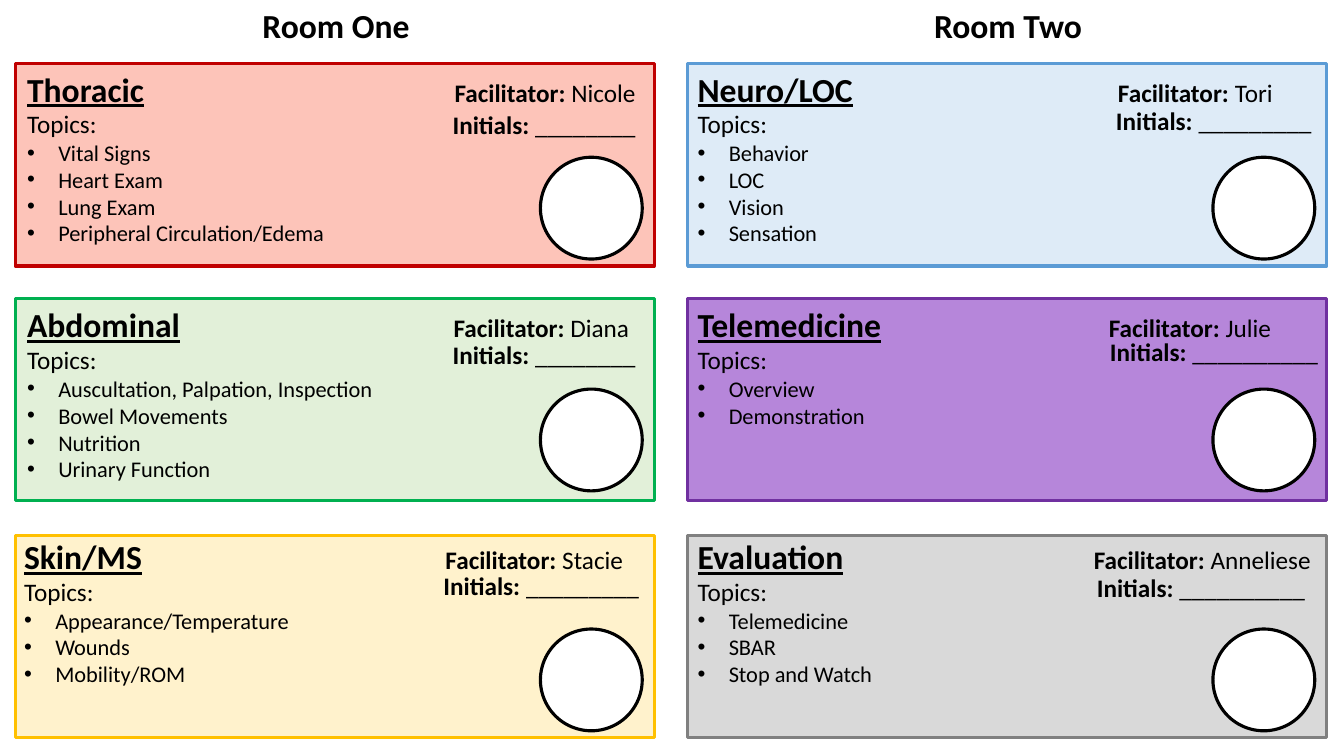
from lxml import etree
from pptx import Presentation, util as u
from pptx.dml.color import RGBColor
from pptx.enum import shapes, text
from pptx.oxml import ns

deck = Presentation()
deck.slide_width, deck.slide_height = u.Inches(13.33), u.Inches(7.5)
slide = deck.slides.add_slide(deck.slide_layouts[6])

# Grid: two rooms across, three stations down
ROOM_LEFT = (0.15, 6.82)
STATION_TOP = (0.63, 2.96, 5.31)
TOPICS_TOP = (0.63, 2.97, 5.27)
STAMP_TOP = (1.56, 3.86, 6.24)
STATION_W, STATION_H = 6.34, 2.01
STAMP_OFFSET, STAMP_SIZE = 5.21, 1.01
BULLET_INDENT = 0.31

# Room, row, name, fill, line, text left, facilitator, its tab stop,
# initials (left, top, width), blanks to sign on, topics
STATIONS = [
    (0, 0, "Thoracic", "FDC4B9", "C00000", 0.17, "Nicole", 4.24, (4.39, 1.04, 2.08), 8,
     ["Vital Signs", "Heart Exam", "Lung Exam", "Peripheral Circulation/Edema"]),
    (0, 1, "Abdominal", "E2F0D9", "00B050", 0.17, "Diana", 4.23, (4.39, 3.32, 2.08), 8,
     ["Auscultation, Palpation, Inspection", "Bowel Movements", "Nutrition", "Urinary Function"]),
    (0, 2, "Skin/MS", "FFF2CC", "FFC000", 0.14, "Stacie", 4.18, (4.3, 5.61, 2.21), 9,
     ["Appearance/Temperature", "Wounds", "Mobility/ROM"]),
    (1, 0, "Neuro/LOC", "DEEBF7", "5B9BD5", 6.82, "Tori", 4.17, (10.97, 1, 2.19), 9,
     ["Behavior", "LOC", "Vision", "Sensation"]),
    (1, 1, "Telemedicine", "B686DA", "7030A0", 6.82, "Julie", 4.08, (10.91, 3.29, 2.38), 10,
     ["Overview", "Demonstration"]),
    (1, 2, "Evaluation", "D9D9D9", "808080", 6.82, "Anneliese", 3.93, (10.78, 5.63, 2.38), 10,
     ["Telemedicine", "SBAR", "Stop and Watch"]),
]


def add_panel(kind, left, top, width, height, fill, line):
    panel = slide.shapes.add_shape(kind, *map(u.Inches, (left, top, width, height)))
    panel.shadow.inherit = False
    panel.fill.solid()
    panel.fill.fore_color.rgb = RGBColor.from_string(fill)
    panel.line.color.rgb = RGBColor.from_string(line)
    panel.line.width = u.Pt(2.25)


def add_text(left, top, width, height, lines):
    """Each line is a list of runs: (words, size, bold, underline)."""
    box = slide.shapes.add_textbox(*map(u.Inches, (left, top, width, height)))
    frame = box.text_frame
    frame.word_wrap = True
    frame.auto_size = text.MSO_AUTO_SIZE.SHAPE_TO_FIT_TEXT
    for number, line in enumerate(lines):
        paragraph = frame.add_paragraph() if number else frame.paragraphs[0]
        for words, size, bold, underline in line:
            run = paragraph.add_run()
            run.text = words
            run.font.name, run.font.size = "Calibri", u.Pt(size)
            run.font.bold, run.font.underline = bold, underline
            run.font.color.rgb = RGBColor.from_string("000000")
    return frame.paragraphs


# Room headings, one per half of the slide
for room, heading in enumerate(("Room One", "Room Two")):
    heading_lines = add_text(room * 13.33 / 2, 0, 13.33 / 2, 0.5,
                             [[(heading, 24, True, False)]])
    heading_lines[0].alignment = text.PP_ALIGN.CENTER

for (room, row, name, fill, line, topics_left, facilitator, facilitator_tab,
     initials, blanks, topics) in STATIONS:
    # Station panel and stamp circle
    add_panel(shapes.MSO_SHAPE.RECTANGLE, ROOM_LEFT[room], STATION_TOP[row],
              STATION_W, STATION_H, fill, line)
    add_panel(shapes.MSO_SHAPE.OVAL, ROOM_LEFT[room] + STAMP_OFFSET, STAMP_TOP[row],
              STAMP_SIZE, STAMP_SIZE, "FFFFFF", "000000")

    # Name, facilitator and topics
    title = [(name, 24, True, True), ("\t", 24, True, False),
             ("Facilitator: ", 18, True, False), (facilitator, 18, False, False)]
    station_lines = add_text(
        topics_left, TOPICS_TOP[row], STATION_W, 0.84 + 0.27 * len(topics),
        [title, [("Topics:", 18, False, False)]]
        + [[(topic, 16, False, False)] for topic in topics])

    title_props = station_lines[0]._p.get_or_add_pPr()
    tabs = etree.SubElement(title_props, ns.qn("a:tabLst"))
    etree.SubElement(tabs, ns.qn("a:tab"), pos=str(u.Inches(facilitator_tab)), algn="l")

    for topic_line in station_lines[2:]:
        props = topic_line._p.get_or_add_pPr()
        props.set("marL", str(u.Inches(BULLET_INDENT)))
        props.set("indent", str(-u.Inches(BULLET_INDENT)))
        etree.SubElement(props, ns.qn("a:buFont"), typeface="Arial")
        etree.SubElement(props, ns.qn("a:buChar"), char="•")

    # Signature line
    add_text(*initials, 0.4,
             [[("Initials: ", 18, True, False), ("_" * blanks, 18, False, False)]])

deck.save("out.pptx")
